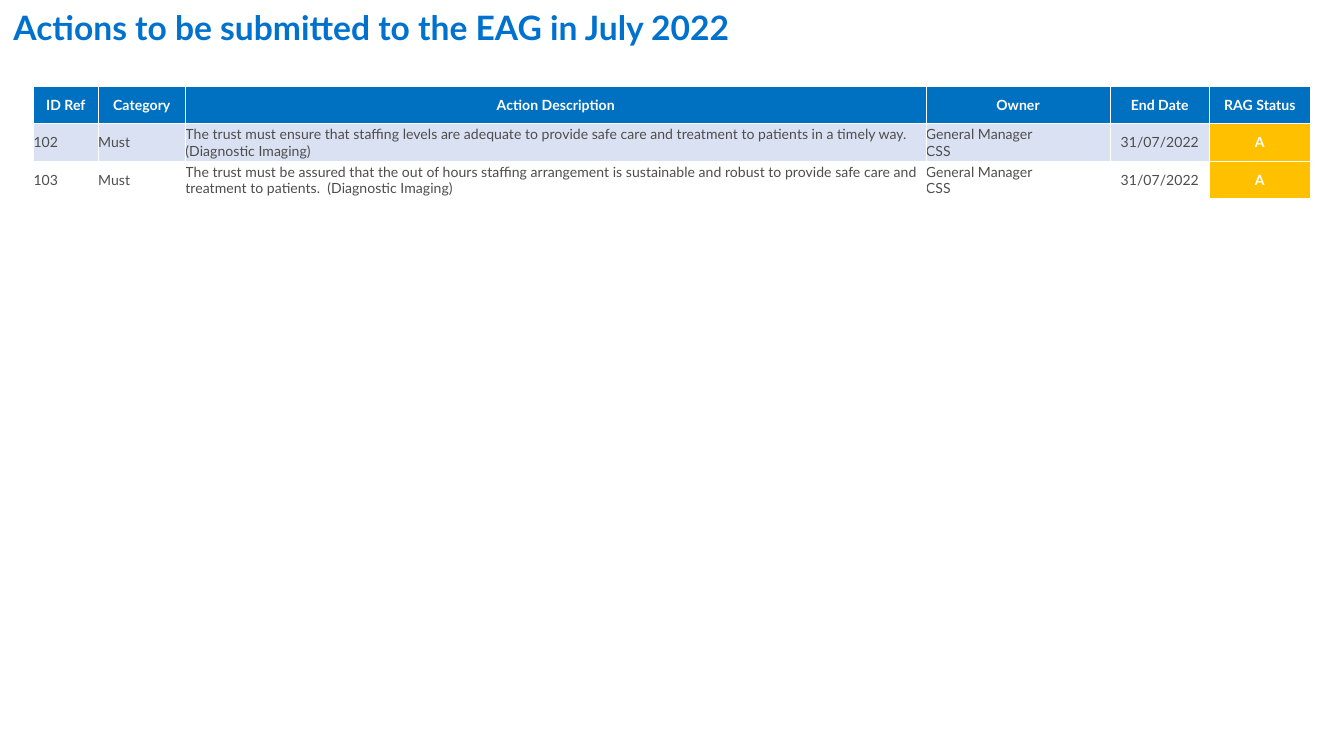
"""Build the slide of actions to be submitted to the EAG in July 2022."""
from copy import deepcopy
from dataclasses import dataclass
from typing import NamedTuple

from lxml import etree
from pptx import Presentation
from pptx.dml.color import RGBColor
from pptx.enum.text import MSO_ANCHOR, PP_ALIGN
from pptx.oxml.ns import qn
from pptx.util import Inches, Pt

LEFT, CENTER = PP_ALIGN.LEFT, PP_ALIGN.CENTER
TOP, MIDDLE = MSO_ANCHOR.TOP, MSO_ANCHOR.MIDDLE


@dataclass(frozen=True)
class Theme:
    font: str = "Lato"
    title_size: float = 18
    table_size: float = 7.5
    border_width: float = 0.5
    title: str = "0072CE"
    header: str = "0070C0"
    band: str = "D9E1F2"
    amber: str = "FFC000"
    body: str = "4D4D4D"
    white: str = "FFFFFF"


class Column(NamedTuple):
    heading: str
    width: float
    align: PP_ALIGN = LEFT


class Action(NamedTuple):
    reference: str
    category: str
    description: str
    owner: str
    end_date: str
    status: str


THEME = Theme()
SLIDE_WIDTH = 10
SLIDE_HEIGHT = SLIDE_WIDTH * 9 / 16
ROW_HEIGHT = 0.28
COLUMNS = [
    Column("ID Ref", 0.48),
    Column("Category", 0.65),
    Column("Action Description", 5.51),
    Column("Owner", 1.37),
    Column("End Date", 0.74, CENTER),
    Column("RAG Status", 0.75, CENTER),
]
ACTIONS = [
    Action("102", "Must",
           "The trust must ensure that staffing levels are adequate to provide safe care "
           "and treatment to patients in a timely way. (Diagnostic Imaging)",
           "General Manager\nCSS", "31/07/2022", "A"),
    Action("103", "Must",
           "The trust must be assured that the out of hours staffing arrangement is "
           "sustainable and robust to provide safe care and treatment to patients.  "
           "(Diagnostic Imaging)",
           "General Manager\nCSS", "31/07/2022", "A"),
]


def write_text(text_frame, text: str, *, size: float, color: str,
               bold: bool = False, align: PP_ALIGN = LEFT) -> None:
    paragraph = text_frame.paragraphs[0]
    paragraph.text = text
    paragraph.alignment = align
    for run in paragraph.runs:
        run.font.name = THEME.font
        run.font.size = Pt(size)
        run.font.bold = bold
        run.font.color.rgb = RGBColor.from_string(color)
    for line_break in paragraph._p.findall(qn("a:br")):
        line_break.append(deepcopy(paragraph.runs[0]._r.rPr))


def set_borders(cell) -> None:
    properties = cell._tc.get_or_add_tcPr()
    for side in ("a:lnL", "a:lnR", "a:lnT", "a:lnB"):
        line = etree.SubElement(properties, qn(side), w=str(Pt(THEME.border_width)))
        fill = etree.SubElement(line, qn("a:solidFill"))
        etree.SubElement(fill, qn("a:srgbClr"), val=THEME.white)


def fill_cell(cell, text: str, *, fill: str | None, color: str,
              bold: bool, align: PP_ALIGN) -> None:
    cell.margin_left = cell.margin_right = cell.margin_top = cell.margin_bottom = 0
    cell.vertical_anchor = MIDDLE
    set_borders(cell)
    if fill:
        cell.fill.solid()
        cell.fill.fore_color.rgb = RGBColor.from_string(fill)
    else:
        cell.fill.background()
    write_text(cell.text_frame, text, size=THEME.table_size, color=color,
               bold=bold, align=align)


def add_title(slide, text: str) -> None:
    title = slide.shapes.title
    title.left, title.top = Inches(0), Inches(0)
    title.width, title.height = Inches(9.75), Inches(0.5)
    title.text_frame.vertical_anchor = TOP
    write_text(title.text_frame, text, size=THEME.title_size, color=THEME.title, bold=True)


def add_action_table(slide, columns: list[Column], actions: list[Action]) -> None:
    row_count = len(actions) + 1
    table = slide.shapes.add_table(
        row_count, len(columns), Inches(0.25), Inches(0.64),
        Inches(sum(column.width for column in columns)),
        Inches(ROW_HEIGHT * row_count)).table
    for row in table.rows:
        row.height = Inches(ROW_HEIGHT)
    for index, column in enumerate(columns):
        table.columns[index].width = Inches(column.width)
        fill_cell(table.cell(0, index), column.heading, fill=THEME.header,
                  color=THEME.white, bold=True, align=CENTER)
    for row_index, action in enumerate(actions, start=1):
        band = THEME.band if row_index % 2 else None
        for index, (column, text) in enumerate(zip(columns, action)):
            is_status = column.heading == "RAG Status"
            fill_cell(table.cell(row_index, index), text,
                      fill=THEME.amber if is_status else band,
                      color=THEME.white if is_status else THEME.body,
                      bold=is_status, align=column.align)


def main() -> None:
    presentation = Presentation()
    presentation.slide_width = Inches(SLIDE_WIDTH)
    presentation.slide_height = Inches(SLIDE_HEIGHT)
    slide = presentation.slides.add_slide(presentation.slide_layouts[5])
    add_title(slide, "Actions to be submitted to the EAG in July 2022")
    add_action_table(slide, COLUMNS, ACTIONS)
    presentation.save("out.pptx")


if __name__ == "__main__":
    main()
